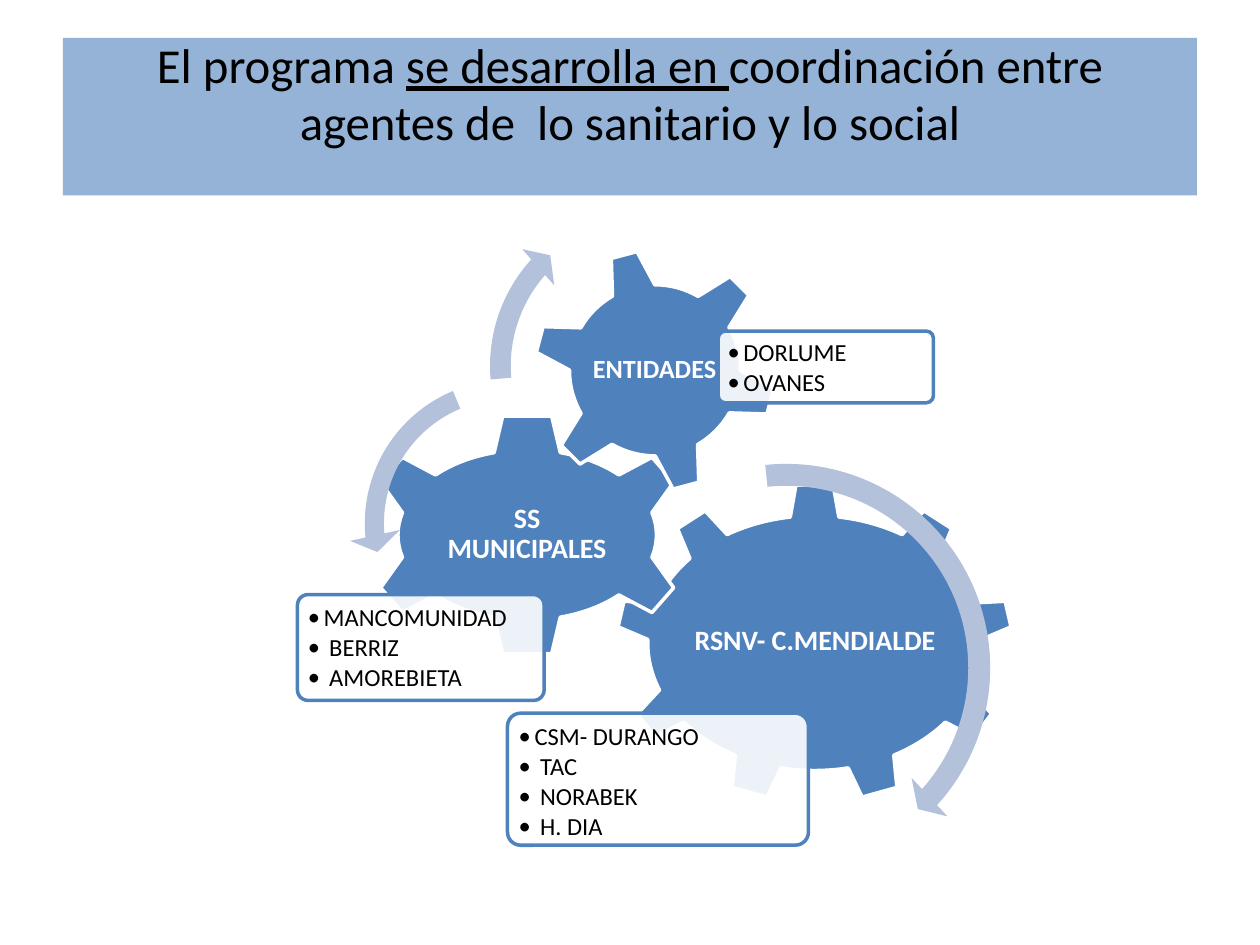
"""Build a slide of three interlocking gears under a title band."""
from lxml.etree import SubElement
from pptx import Presentation
from pptx.dml.color import RGBColor
from pptx.enum.shapes import MSO_SHAPE as Form
from pptx.enum.text import MSO_ANCHOR, PP_ALIGN
from pptx.oxml.ns import qn
from pptx.util import Pt

BLUE = RGBColor(0x4F, 0x81, 0xBD)
BAND = RGBColor(0x95, 0xB3, 0xD7)
PALE = RGBColor(0xB3, 0xC1, 0xDB)
WHITE = RGBColor(0xFF, 0xFF, 0xFF)
BLACK = RGBColor(0, 0, 0)


class Deck:
    def __init__(self):
        self.prs = Presentation()
        self.prs.slide_width, self.prs.slide_height = Pt(720), Pt(540)
        self.slide = self.prs.slides.add_slide(self.prs.slide_layouts[6])
        self.face = "Calibri"

    def apply(self, item, style):
        for name, value in style.items():
            setattr(item, name, value)

    def shape(self, form, box, fill, line=None, adjust=(), turn=0):
        shape = self.slide.shapes.add_shape(form, *map(Pt, box))
        shape.shadow.inherit = False
        shape.rotation = turn
        shape.fill.solid()
        shape.fill.fore_color.rgb = fill
        if line is None:
            shape.line.fill.background()
        else:
            shape.line.color.rgb = line
            shape.line.width = Pt(2)
        for index, value in enumerate(adjust):
            shape.adjustments[index] = value
        return shape

    def frame(self, shape, inset, anchor):
        sides = ("left", "top", "right", "bottom")
        style = {f"margin_{side}": Pt(inset) for side in sides}
        self.apply(shape.text_frame, {**style, "word_wrap": True, "vertical_anchor": anchor})
        return shape.text_frame

    def text(self, box, inset, anchor):
        return self.frame(self.slide.shapes.add_textbox(*map(Pt, box)), inset, anchor)

    def run(self, para, text, size, color, **style):
        run = para.add_run()
        run.text = text
        self.apply(run.font, {"name": self.face, "size": Pt(size), **style})
        run.font.color.rgb = color

    def title(self, box, parts):
        frame = self.frame(self.shape(Form.RECTANGLE, box, BAND), 0, MSO_ANCHOR.TOP)
        frame.margin_left = frame.margin_right = Pt(7.2)
        para = frame.paragraphs[0]
        self.apply(para, {"alignment": PP_ALIGN.CENTER, "line_spacing": 0.97})
        for text, under in parts:
            self.run(para, text, 27.9, BLACK, underline=under)

    def gear(self, form, box, label, area, size=16, turn=0):
        self.shape(form, box, BLUE, WHITE, turn=turn)
        para = self.text(area, 1.6, MSO_ANCHOR.MIDDLE).paragraphs[0]
        self.apply(para, {"alignment": PP_ALIGN.CENTER, "line_spacing": 0.9})
        self.run(para, label, size, WHITE, bold=True)

    def panel(self, box, items):
        shape = self.shape(Form.ROUNDED_RECTANGLE, box, WHITE, BLUE, [0.1])
        tint = shape.fill._xPr.find(qn("a:solidFill"))[0]
        SubElement(tint, qn("a:alpha"), val="90000")
        left, top, width, height = box
        gap = height * 0.03
        area = left + gap, top + gap, width - 2 * gap, height - 2 * gap
        frame = self.text(area, 4.2, MSO_ANCHOR.TOP)
        for index, item in enumerate(items):
            para = frame.add_paragraph() if index else frame.paragraphs[0]
            self.apply(para, {"line_spacing": 0.9, "space_after": Pt(2)})
            props = para._p.get_or_add_pPr()
            props.set("marL", str(Pt(9)))
            props.set("indent", str(Pt(-9)))
            SubElement(props, qn("a:buFont"), typeface=self.face)
            SubElement(props, qn("a:buChar"), char="•")
            self.run(para, item, 14, BLACK)

    def arrow(self, form, left, top, side, adjust):
        self.shape(form, (left, top, side, side), PALE, adjust=adjust)


def main():
    deck = Deck()
    deck.title((36, 21.6, 648, 90), [
        ("El programa ", False),
        ("se desarrolla en ", True),
        ("coordinación entre agentes de  lo sanitario y lo social", False),
    ])
    deck.gear(Form.GEAR_9, (352, 276.5, 227, 182), "RSNV- C.MENDIALDE",
              (394.5, 319.7, 142.5, 93.6))
    deck.panel((290, 407.5, 172, 75.5), ["CSM- DURANGO", " TAC", " NORABEK", " H. DIA"])
    deck.gear(Form.GEAR_6, (206.6, 236.2, 189.4, 139), "SS MUNICIPALES",
              (249, 271.4, 104.4, 68.4))
    deck.panel((170, 339.8, 141, 60.5), ["MANCOMUNIDAD", " BERRIZ", " AMOREBIETA"])
    deck.gear(Form.GEAR_6, (304.5, 141.8, 139.7, 139.7), "ENTIDADES",
              (334.8, 172, 78.5, 78.5), 15, 345)
    deck.panel((410.4, 189.2, 123, 41), ["DORLUME", "OVANES"])
    deck.arrow(Form.CIRCULAR_ARROW, 324, 256.3, 250.6,
               (0.05, 2.99, 25.24, 158.45, 0.06))
    deck.arrow(Form.LEFT_CIRCULAR_ARROW, 199.4, 208, 182.2,
               (0.06, 4.3, 104.89, 148.38, 0.08))
    deck.arrow(Form.CIRCULAR_ARROW, 272.2, 110.9, 196.6,
               (0.06, 3.94, 133.14, 105.08, 0.07))
    deck.prs.save("out.pptx")


if __name__ == "__main__":
    main()
